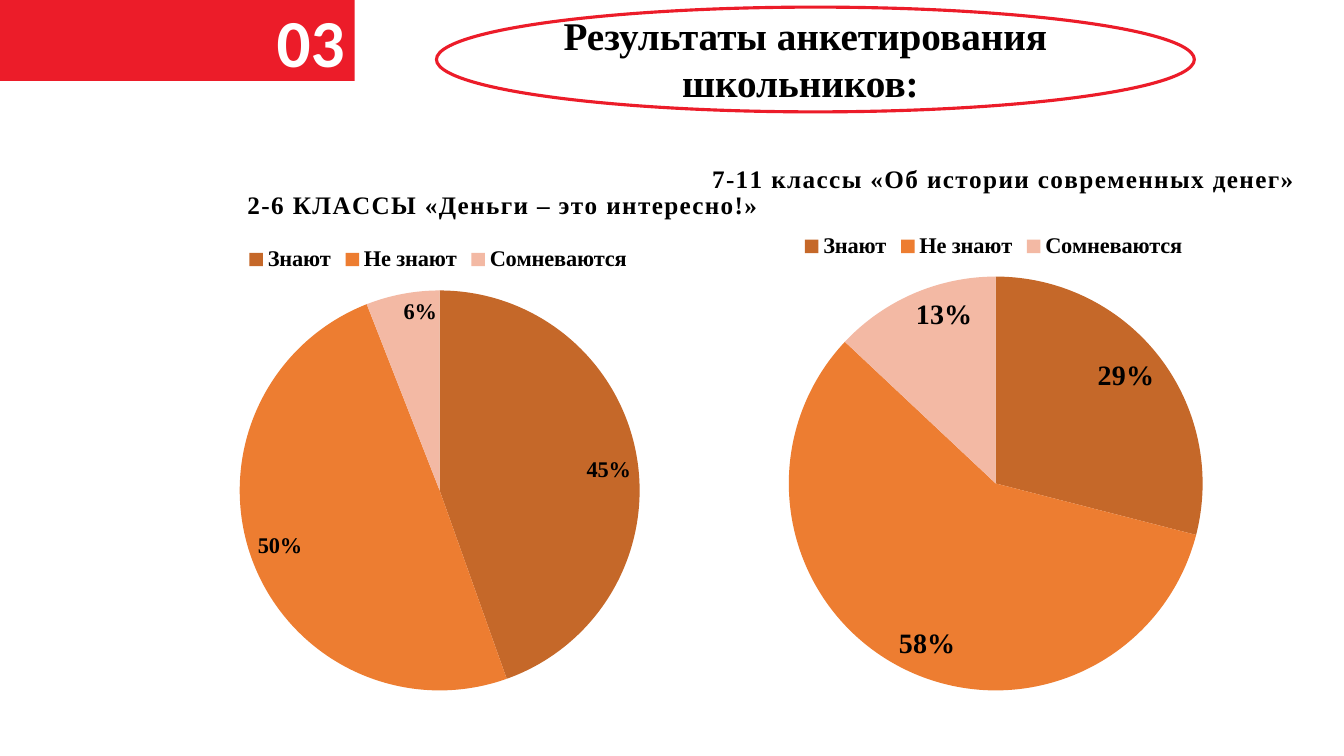
from dataclasses import dataclass

from pptx import Presentation
from pptx.chart.data import CategoryChartData
from pptx.dml.color import RGBColor
from pptx.enum.chart import XL_CHART_TYPE, XL_LABEL_POSITION, XL_LEGEND_POSITION
from pptx.enum.shapes import MSO_SHAPE
from pptx.enum.text import MSO_ANCHOR, PP_ALIGN
from pptx.oxml import parse_xml
from pptx.oxml.ns import nsdecls
from pptx.util import Cm, Pt

COLORS = {
    "red": "EC1C29",
    "white": "FFFFFF",
    "black": "000000",
    "know": "C56829",
    "not_know": "ED7D31",
    "doubt": "F3B9A4",
}
SERIF = "Times New Roman"
ANSWERS = {"Знают": "know", "Не знают": "not_know", "Сомневаются": "doubt"}


@dataclass
class Survey:
    """One pie chart; all lengths are centimetres on the slide."""
    title: str
    values: tuple[int, ...]
    box: tuple[float, float, float, float]
    title_at: tuple[float, float]
    legend_at: tuple[float, float]
    pie_at: tuple[float, float]
    diameter: float
    label_size: int


SENIOR = Survey("7-11 классы «Об истории современных денег»", (29, 58, 13),
                (15.54, 3.48, 19.1, 14.27), (17.83, 4.0), (20.1, 5.78),
                (19.88, 6.97), 10.43, 20)
JUNIOR = Survey("2-6 КЛАССЫ «Деньги – это интересно!»", (45, 50, 6),
                (1.78, 4.42, 18.59, 13.34), (6.12, 4.65), (6.1, 6.11),
                (6.04, 7.32), 10.08, 16)


def rgb(name: str) -> RGBColor:
    return RGBColor.from_string(COLORS[name])


def set_font(font, size: int, color: str = "black", name: str = SERIF) -> None:
    font.name, font.size, font.bold = name, Pt(size), True
    font.color.rgb = rgb(color)


def place(chart, part: str, index: int, survey: Survey,
          at: tuple[float, float], size: float = 0) -> None:
    """Give a chart part a manual layout, as fractions of the chart's box."""
    left, top, width, height = survey.box
    values = {"x": (at[0] - left) / width, "y": (at[1] - top) / height}
    if size:
        values |= {"w": size / width, "h": size / height}
    target = '<c:layoutTarget val="inner"/>' if size else ""
    modes = '<c:xMode val="edge"/><c:yMode val="edge"/>'
    sizes = "".join(f'<c:{k} val="{v:.4f}"/>' for k, v in values.items())
    element = chart._chartSpace.xpath(f"c:chart/c:{part}")[0]
    for old in element.xpath("c:layout"):
        element.remove(old)
    element.insert(index, parse_xml(
        f'<c:layout {nsdecls("c")}><c:manualLayout>{target}{modes}{sizes}'
        "</c:manualLayout></c:layout>"))


def add_survey(s, survey: Survey) -> None:
    data = CategoryChartData()
    data.categories = list(ANSWERS)
    data.add_series("Series 1", survey.values)
    chart = s.shapes.add_chart(XL_CHART_TYPE.PIE, *map(Cm, survey.box), data).chart
    chart.font.name, chart.font.size = "Calibri", Pt(10)
    chart.font.color.rgb = rgb("black")
    chart._chartSpace.xpath("c:txPr")[0].addprevious(parse_xml(
        f'<c:spPr {nsdecls("c", "a")}><a:noFill/><a:ln><a:noFill/></a:ln></c:spPr>'))

    chart.has_title = True
    r = chart.chart_title.text_frame.paragraphs[0].add_run()
    r.text = survey.title
    set_font(r.font, 18)
    r._r.get_or_add_rPr().set("spc", "100")
    place(chart, "title", 1, survey, survey.title_at)

    chart.has_legend = True
    chart.legend.position = XL_LEGEND_POSITION.TOP
    chart.legend.include_in_layout = False
    set_font(chart.legend.font, 16)
    place(chart, "legend", 1, survey, survey.legend_at)

    plot = chart.plots[0]
    plot.vary_by_categories = True
    for i, color in enumerate(ANSWERS.values()):
        fill = plot.series[0].points[i].format.fill
        fill.solid()
        fill.fore_color.rgb = rgb(color)
    plot.has_data_labels = True
    labels = plot.data_labels
    labels.show_value, labels.show_percentage = False, True
    labels.number_format, labels.number_format_is_linked = "0%", False
    labels.position = XL_LABEL_POSITION.INSIDE_END
    set_font(labels.font, survey.label_size)
    place(chart, "plotArea", 0, survey, survey.pie_at, survey.diameter)


def add_number(s) -> None:
    sp = s.shapes.add_shape(MSO_SHAPE.RECTANGLE, 0, 0, Cm(8.94), Cm(2.04))
    sp.shadow.inherit = False
    sp.fill.solid()
    sp.fill.fore_color.rgb = rgb("red")
    sp.line.fill.background()
    tf = sp.text_frame
    tf.vertical_anchor = MSO_ANCHOR.MIDDLE
    p = tf.paragraphs[0]
    p.text, p.alignment = "03", PP_ALIGN.RIGHT
    set_font(p.font, 48, "white", "Calibri")


def add_heading(s) -> None:
    tf = s.shapes.add_textbox(Cm(11), Cm(0.15), Cm(18.59), Cm(2.64)).text_frame
    tf.word_wrap = True
    p = tf.paragraphs[0]
    p.text, p.alignment = "Результаты анкетирования школьников: ", PP_ALIGN.CENTER
    set_font(p.font, 28)
    sp = s.shapes.add_shape(MSO_SHAPE.OVAL, Cm(11), Cm(0.18), Cm(19.1), Cm(2.64))
    sp.shadow.inherit = False
    sp.fill.background()
    sp.line.color.rgb = rgb("red")
    sp.line.width = Pt(2.25)


def main() -> None:
    prs = Presentation()
    prs.slide_width, prs.slide_height = Cm(33.87), Cm(19.05)
    s = prs.slides.add_slide(prs.slide_layouts[6])
    add_number(s)
    add_survey(s, SENIOR)
    add_heading(s)
    add_survey(s, JUNIOR)
    prs.save("out.pptx")


if __name__ == "__main__":
    main()
